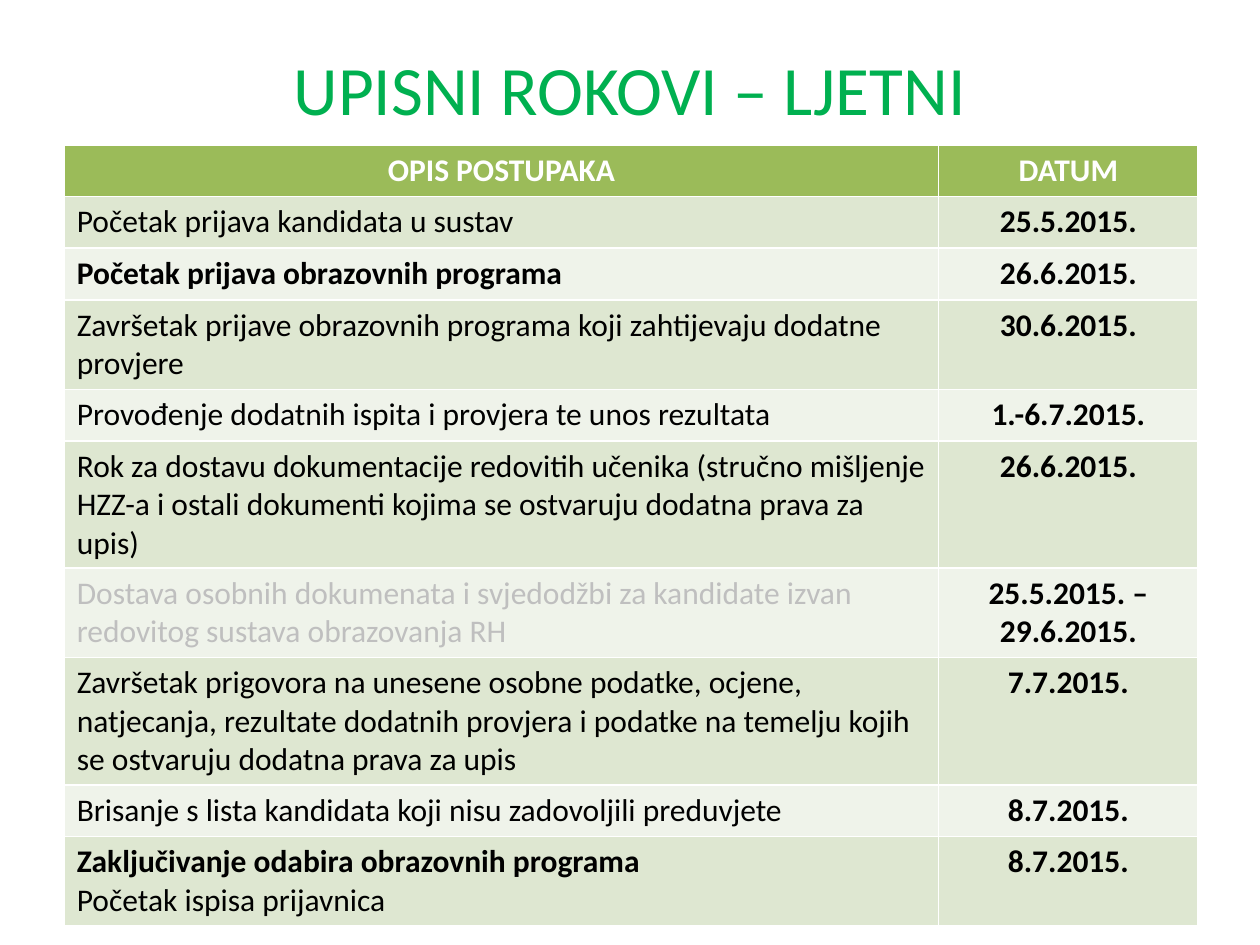
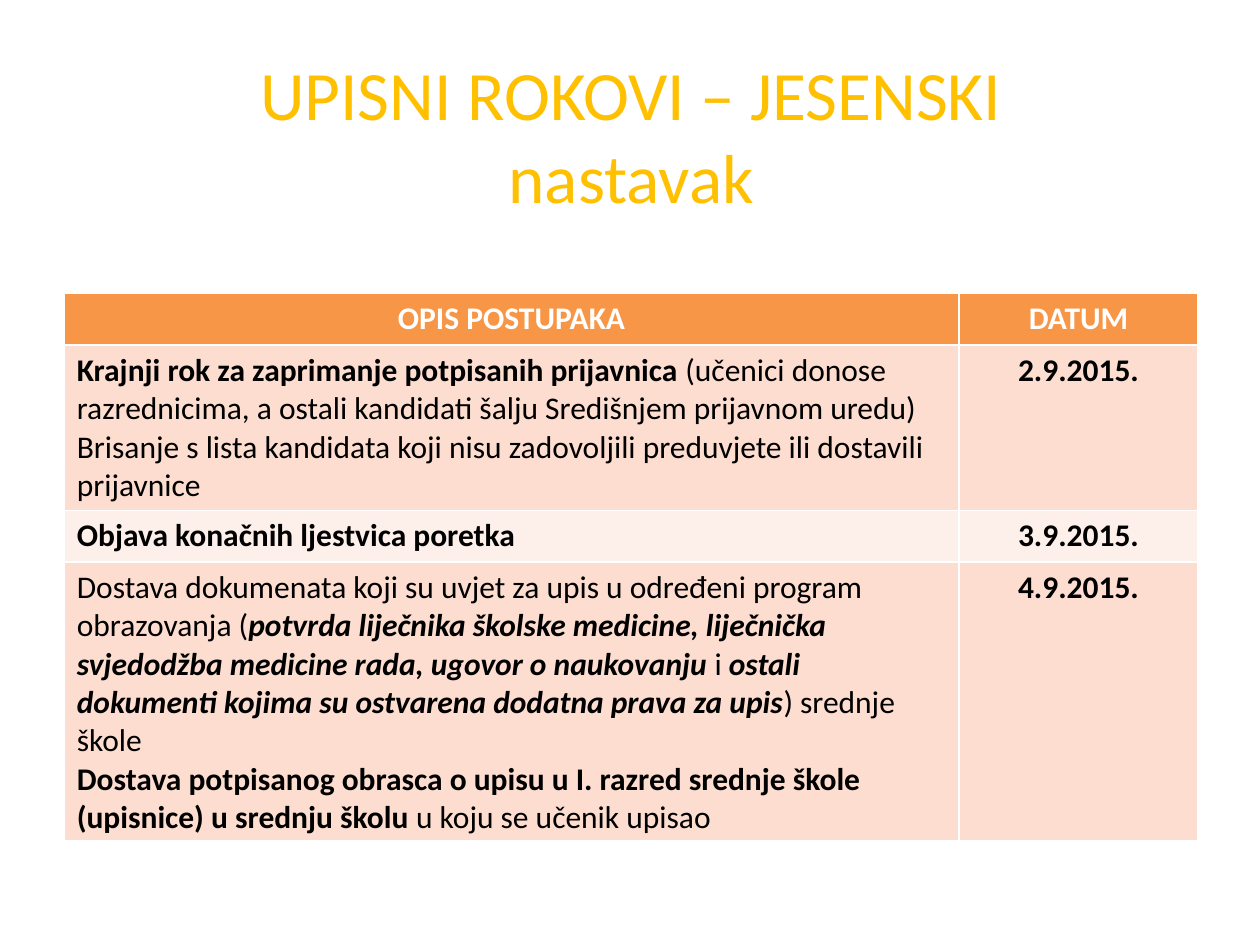
from pptx import Presentation
from pptx.dml.color import RGBColor
from pptx.enum.text import MSO_ANCHOR, PP_ALIGN
from pptx.util import Inches, Pt

CENTER, LEFT = PP_ALIGN.CENTER, PP_ALIGN.LEFT
MIDDLE = MSO_ANCHOR.MIDDLE
FONT = "Calibri"
TITLE_SIZE, TABLE_SIZE = 39.6, 18
TABLE_LEFT, TABLE_WIDTH = 0.51, 9
ROW_HEIGHT, EXTRA_LINE = 0.41, 0.3
HEADINGS = ("OPIS POSTUPAKA", "DATUM")

COLORS = {
    "text": "000000", "white": "FFFFFF", "muted": "BFBFBF",
    "summer_title": "00B050", "summer_head": "9BBB59",
    "summer_odd": "DEE7D1", "summer_even": "EFF3EA",
    "autumn_title": "FFC000", "autumn_head": "F79646",
    "autumn_odd": "FCDDCF", "autumn_even": "FDEFE9",
}

# Each row: number of text lines, description paragraphs, date paragraphs.
# A paragraph is a list of (text, style) runs; b = bold, i = italic, m = muted.
SUMMER_ROWS = [
    (1, [[("Početak prijava kandidata u sustav", "")]], ["25.5.2015."]),
    (1, [[("Početak prijava obrazovnih programa", "b")]], ["26.6.2015."]),
    (2, [[("Završetak prijave obrazovnih programa koji zahtijevaju dodatne "
           "provjere", "")]], ["30.6.2015."]),
    (1, [[("Provođenje dodatnih ispita i provjera te unos rezultata", "")]],
     ["1.-6.7.2015."]),
    (3, [[("Rok za dostavu dokumentacije redovitih učenika (stručno mišljenje "
           "HZZ-a i ostali dokumenti kojima se ostvaruju dodatna prava za "
           "upis)", "")]], ["26.6.2015."]),
    (2, [[("Dostava osobnih dokumenata i svjedodžbi za kandidate izvan "
           "redovitog sustava obrazovanja RH", "m")]],
     ["25.5.2015. –", "29.6.2015."]),
    (3, [[("Završetak prigovora na unesene osobne podatke, ocjene, "
           "natjecanja, rezultate dodatnih provjera i podatke na temelju "
           "kojih se ostvaruju dodatna prava za upis", "")]], ["7.7.2015."]),
    (1, [[("Brisanje s lista kandidata koji nisu zadovoljili preduvjete", "")]],
     ["8.7.2015."]),
    (2, [[("Zaključivanje odabira obrazovnih programa", "b")],
         [("Početak ispisa prijavnica", "")]], ["8.7.2015."]),
]

AUTUMN_ROWS = [
    (4, [[("Krajnji rok za zaprimanje potpisanih prijavnica ", "b"),
          ("(učenici donose razrednicima, a ostali kandidati šalju Središnjem "
           "prijavnom uredu)", "")],
         [("Brisanje s lista kandidata koji nisu zadovoljili preduvjete ili "
           "dostavili prijavnice", "")]], ["2.9.2015."]),
    (1, [[("Objava konačnih ljestvica poretka", "b")]], ["3.9.2015."]),
    (7, [[("Dostava dokumenata koji su uvjet za upis u određeni program "
           "obrazovanja (", ""),
          ("potvrda liječnika školske medicine, liječnička svjedodžba "
           "medicine rada, ugovor o naukovanju ", "bi"),
          ("i ", ""),
          ("ostali dokumenti kojima su ostvarena dodatna prava za upis", "bi"),
          (") srednje škole", "")],
         [("Dostava potpisanog obrasca o upisu u I. razred srednje škole "
           "(upisnice) u srednju školu ", "b"),
          ("u koju se učenik upisao", "")]], ["4.9.2015."]),
]


def rgb(name):
    return RGBColor.from_string(COLORS[name])


def style_run(r, size, color, bold=False, italic=False):
    r.font.name = FONT
    r.font.size = Pt(size)
    r.font.color.rgb = rgb(color)
    r.font.bold = bold
    r.font.italic = italic


def add_title(s, text, color, left, top, height):
    tf = s.shapes.add_textbox(Inches(left), Inches(top), Inches(9),
                              Inches(height)).text_frame
    tf.word_wrap = True
    tf.vertical_anchor = MIDDLE
    p = tf.paragraphs[0]
    p.text = text
    p.alignment = CENTER
    for r in p.runs:
        style_run(r, TITLE_SIZE, color)


def fill_cell(cell, paragraphs, fill, align, color="text"):
    cell.fill.solid()
    cell.fill.fore_color.rgb = rgb(fill)
    tf = cell.text_frame
    for i, runs in enumerate(paragraphs):
        p = tf.add_paragraph() if i else tf.paragraphs[0]
        p.alignment = align
        for text, style in runs:
            r = p.add_run()
            r.text = text
            style_run(r, TABLE_SIZE, "muted" if "m" in style else color,
                      "b" in style, "i" in style)


def add_schedule(s, rows, season, top, date_width):
    """Draw the table of deadlines in the colours of the season."""
    heights = [ROW_HEIGHT] + [ROW_HEIGHT + EXTRA_LINE * (lines - 1)
                              for lines, _, _ in rows]
    table = s.shapes.add_table(len(heights), 2, Inches(TABLE_LEFT), Inches(top),
                               Inches(TABLE_WIDTH), Inches(sum(heights))).table
    table.columns[0].width = Inches(TABLE_WIDTH - date_width)
    table.columns[1].width = Inches(date_width)
    for row, height in zip(table.rows, heights):
        row.height = Inches(height)
    for col, heading in enumerate(HEADINGS):
        fill_cell(table.cell(0, col), [[(heading, "b")]], f"{season}_head",
                  CENTER, "white")
    for i, (_, description, dates) in enumerate(rows, start=1):
        band = f"{season}_odd" if i % 2 else f"{season}_even"
        fill_cell(table.cell(i, 0), description, band, LEFT)
        fill_cell(table.cell(i, 1), [[(date, "b")] for date in dates], band,
                  CENTER)


def main():
    prs = Presentation()
    prs.slide_width, prs.slide_height = Inches(10), Inches(7.5)
    blank = prs.slide_layouts[6]

    s = prs.slides.add_slide(blank)
    add_title(s, "UPISNI ROKOVI – LJETNI", "summer_title", 0.5, 0.3, 0.79)
    add_schedule(s, SUMMER_ROWS, "summer", 1.15, 2.06)

    s = prs.slides.add_slide(blank)
    add_title(s, "UPISNI ROKOVI – JESENSKI\vnastavak", "autumn_title",
              0.51, 0.44, 1.25)
    add_schedule(s, AUTUMN_ROWS, "autumn", 2.33, 1.9)

    prs.save("out.pptx")


if __name__ == "__main__":
    main()
